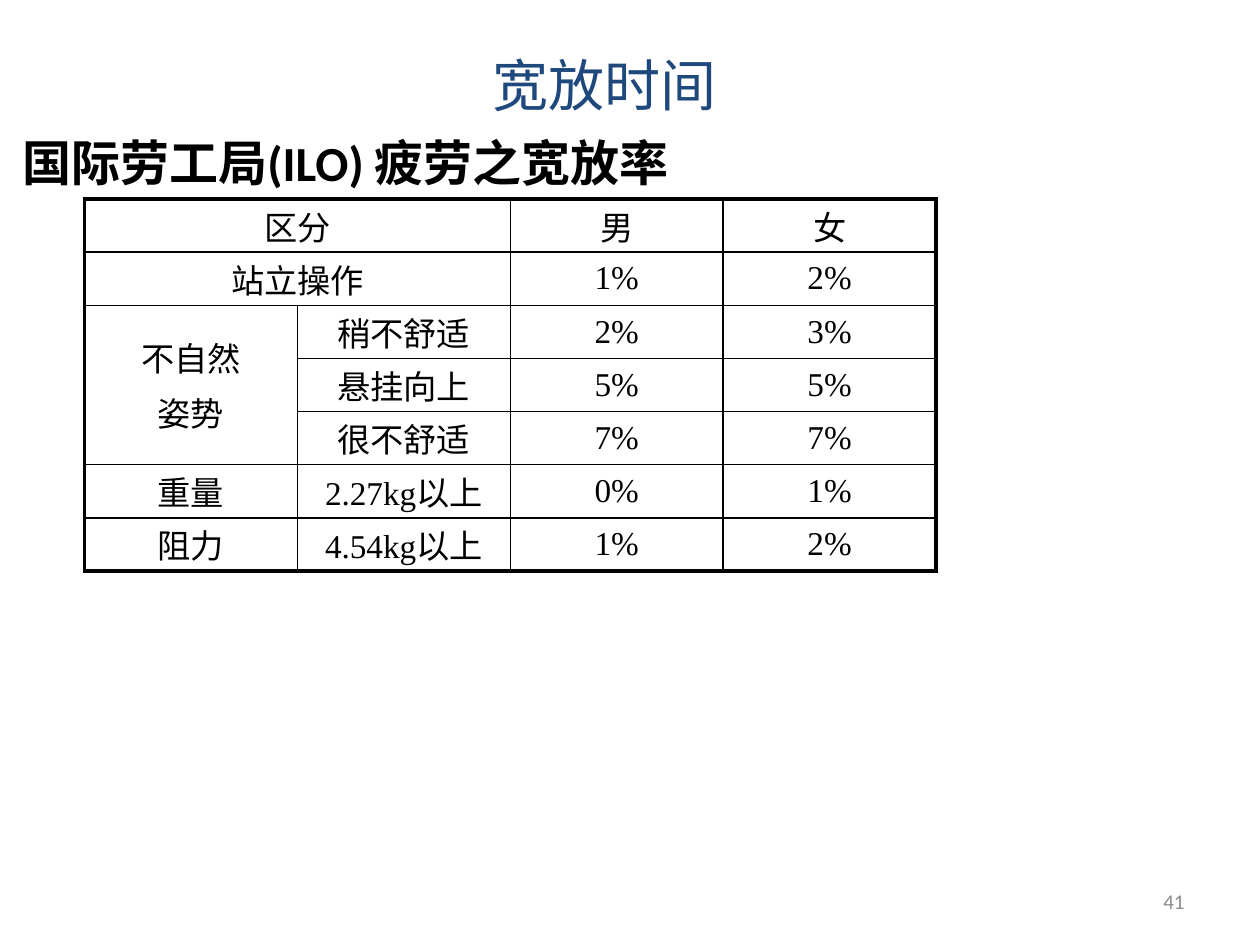
from lxml.etree import SubElement as Sub
from pptx import Presentation
from pptx.dml.color import RGBColor as Rgb
from pptx.enum.text import MSO_ANCHOR as Anchor, PP_ALIGN as Align
from pptx.oxml.ns import qn
from pptx.util import Inches, Pt

HUES = {"ink": "000000", "title": "1F497D", "page": "8C8C8C"}
ROWS = [
    ["区分", None, "男", "女"],
    ["站立操作", None, "1%", "2%"],
    ["不自然\n姿势", "稍不舒适", "2%", "3%"],
    [None, "悬挂向上", "5%", "5%"],
    [None, "很不舒适", "7%", "7%"],
    ["重量", "2.27kg以上", "0%", "1%"],
    ["阻力", "4.54kg以上", "1%", "2%"],
]
SPANS = [((0, 0), (0, 1)), ((1, 0), (1, 1)), ((2, 0), (4, 0))]
THICK, THIN = 2.25, 1


def place(shape, box):
    shape.left, shape.top, shape.width, shape.height = map(Inches, box)


def style(para, size, hue, align=None, face="Calibri", bold=False):
    font = para.font
    font.size, font.name, font.bold = Pt(size), face, bold
    font.color.rgb = Rgb.from_string(HUES[hue])
    para.alignment = align


def add_title(slide, box):
    title = slide.shapes.title
    place(title, box)
    title.text_frame.text = "宽放时间"
    title.text_frame.vertical_anchor = Anchor.MIDDLE
    style(title.text_frame.paragraphs[0], 32, "title", Align.CENTER)


def add_body(slide, box):
    body = slide.placeholders[1]
    place(body, box)
    body.text_frame.text = "国际劳工局(ILO) 疲劳之宽放率"
    para = body.text_frame.paragraphs[0]
    style(para, 28, "ink", bold=True)
    props = para._p.get_or_add_pPr()
    props.set("marL", str(Inches(0.38)))
    props.set("indent", str(Inches(-0.38)))
    Sub(props, qn("a:buNone"))


def add_edge(cell, side, width):
    line = Sub(cell._tc.get_or_add_tcPr(), qn("a:ln" + side), w=str(Pt(width)))
    fill = Sub(line, qn("a:solidFill"))
    Sub(fill, qn("a:srgbClr"), val=HUES["ink"])


def fill_cell(cell, text, edges):
    cell.margin_left = cell.margin_right = Inches(0.05)
    cell.margin_top = cell.margin_bottom = Inches(0.02)
    cell.vertical_anchor = Anchor.MIDDLE
    for side, outer in edges.items():
        add_edge(cell, side, THICK if outer else THIN)
    cell.fill.background()
    cell.text_frame.text = text or ""
    for para in cell.text_frame.paragraphs:
        style(para, 19, "ink", Align.CENTER, "Times New Roman")
        para.space_before = Pt(4)


def add_rates(slide, box):
    high, wide = len(ROWS), len(ROWS[0])
    table = slide.shapes.add_table(high, wide, *map(Inches, box)).table
    table.first_row = table.horz_banding = False
    for r, row in enumerate(ROWS):
        for c, text in enumerate(row):
            edges = {"L": c == 0, "R": c == wide - 1, "T": r == 0, "B": r == high - 1}
            fill_cell(table.cell(r, c), text, edges)
    for start, end in SPANS:
        table.cell(*start).merge(table.cell(*end))


def add_page(slide, box):
    frame = slide.shapes.add_textbox(*map(Inches, box)).text_frame
    frame.word_wrap = True
    frame.vertical_anchor = Anchor.MIDDLE
    frame.text = "41"
    style(frame.paragraphs[0], 12, "page", Align.RIGHT)


def main():
    deck = Presentation()
    deck.slide_width, deck.slide_height = Inches(10), Inches(7.5)
    slide = deck.slides.add_slide(deck.slide_layouts[1])
    add_body(slide, (0.08, 1, 9.25, 5.88))
    add_rates(slide, (0.67, 1.58, 6.76, 2.58))
    add_title(slide, (0.42, 0.17, 8.75, 1))
    add_page(slide, (7.17, 6.95, 2.33, 0.4))
    deck.save("out.pptx")


if __name__ == "__main__":
    main()
